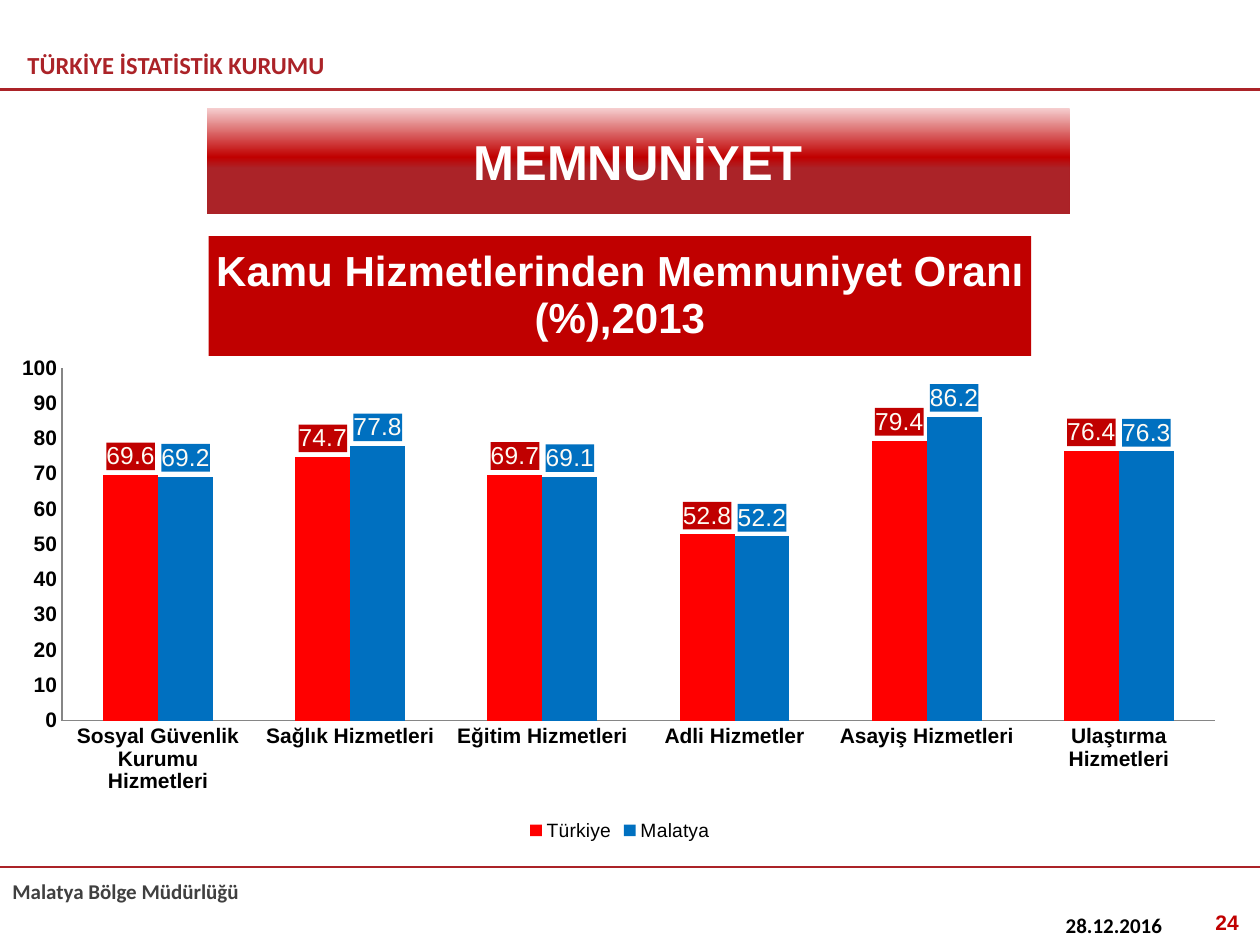
from lxml.etree import SubElement
from pptx import Presentation
from pptx.chart.data import CategoryChartData
from pptx.dml.color import RGBColor
from pptx.enum.chart import XL_CHART_TYPE, XL_LABEL_POSITION, XL_LEGEND_POSITION, XL_TICK_MARK
from pptx.enum.shapes import MSO_CONNECTOR
from pptx.enum.text import MSO_ANCHOR, PP_ALIGN
from pptx.oxml import parse_xml
from pptx.oxml.ns import nsdecls, qn
from pptx.util import Inches, Pt

BRAND = RGBColor(0xAB, 0x23, 0x28)
DARK_RED = RGBColor(0xC0, 0x00, 0x00)
RED = RGBColor(0xFF, 0x00, 0x00)
BLUE = RGBColor(0x00, 0x70, 0xC0)
PINK = RGBColor(0xF5, 0xCD, 0xCE)
CREAM = RGBColor(0xFE, 0xFB, 0xF4)
WHITE = RGBColor(0xFF, 0xFF, 0xFF)
BLACK = RGBColor(0x00, 0x00, 0x00)
CHARCOAL = RGBColor(0x40, 0x40, 0x40)
AXIS_GREY = RGBColor(0x86, 0x86, 0x86)

CATEGORIES = ["Sosyal Güvenlik Kurumu Hizmetleri", "Sağlık Hizmetleri", "Eğitim Hizmetleri",
              "Adli Hizmetler", "Asayiş Hizmetleri", "Ulaştırma Hizmetleri"]
SERIES = [
    ("Türkiye", (69.6, 74.7, 69.7, 52.8, 79.4, 76.4), RED, DARK_RED),
    ("Malatya", (69.2, 77.8, 69.1, 52.2, 86.2, 76.3), BLUE, BLUE),
]


class SlideBuilder:
    def __init__(self, slide):
        self.slide = slide

    def style(self, font, size, color, bold=True, name="Arial"):
        font.name = name
        font.size = Pt(size)
        font.bold = bold
        font.color.rgb = color

    def box(self, sp, left, top, width, height):
        sp.left, sp.top = Inches(left), Inches(top)
        sp.width, sp.height = Inches(width), Inches(height)

    def text(self, text, at, size, color, name="Calibri", align=PP_ALIGN.LEFT):
        sp = self.slide.shapes.add_textbox(*[Inches(v) for v in at])
        tf = sp.text_frame
        tf.word_wrap = True
        p = tf.paragraphs[0]
        p.text = text
        p.alignment = align
        self.style(p.runs[0].font, size, color, name=name)

    def rule(self, y):
        line = self.slide.shapes.add_connector(
            MSO_CONNECTOR.STRAIGHT, 0, Inches(y), Inches(10), Inches(y))
        line.line.color.rgb = BRAND
        line.line.width = Pt(1.5)
        SubElement(line._element.spPr, qn("a:effectLst"))

    def title(self, text, at, stops):
        sp = self.slide.shapes.title
        self.box(sp, *at)
        sp.fill.gradient()
        sp.fill.gradient_angle = 270
        gs_list = sp._element.spPr.find(".//" + qn("a:gsLst"))
        for gs in list(gs_list):
            gs_list.remove(gs)
        for percent, color in stops:
            gs = SubElement(gs_list, qn("a:gs"), pos=str(percent * 1000))
            SubElement(gs, qn("a:srgbClr"), val=str(color))
        tf = sp.text_frame
        tf.text = text
        tf.vertical_anchor = MSO_ANCHOR.MIDDLE
        p = tf.paragraphs[0]
        p.alignment = PP_ALIGN.CENTER
        self.style(p.runs[0].font, 28, WHITE)

    def axis(self, axis):
        axis.has_major_gridlines = False
        axis.major_tick_mark = axis.minor_tick_mark = XL_TICK_MARK.NONE
        axis.format.line.color.rgb = AXIS_GREY
        self.style(axis.tick_labels.font, 12, BLACK)

    def labels(self, series, color):
        labels = series.data_labels
        labels.show_value = True
        labels.number_format = "0.0"
        labels.number_format_is_linked = False
        labels.position = XL_LABEL_POSITION.OUTSIDE_END
        self.style(labels.font, 14, CREAM, bold=False)
        labels._element.find(qn("c:txPr")).addprevious(parse_xml(
            f'<c:spPr {nsdecls("c", "a")}><a:solidFill><a:srgbClr val="{color}"/>'
            '</a:solidFill></c:spPr>'))

    def plot_layout(self, chart, **fractions):
        area = chart._chartSpace.chart.plotArea
        for old in area.findall(qn("c:layout")):
            area.remove(old)
        values = "".join(f'<c:{k} val="{v}"/>' for k, v in fractions.items())
        area.insert(0, parse_xml(
            f'<c:layout {nsdecls("c")}><c:manualLayout><c:layoutTarget val="inner"/>'
            f'<c:xMode val="edge"/><c:yMode val="edge"/>{values}</c:manualLayout></c:layout>'))

    def column_chart(self, title, at):
        data = CategoryChartData()
        data.categories = CATEGORIES
        for name, values, _, _ in SERIES:
            data.add_series(name, values)
        chart = self.slide.shapes.add_chart(
            XL_CHART_TYPE.COLUMN_CLUSTERED, *[Inches(v) for v in at], data).chart
        self.style(chart.font, 10, BLACK, bold=False)

        chart.has_title = True
        chart.chart_title.include_in_layout = False
        tf = chart.chart_title.text_frame
        tf.text = title
        self.style(tf.paragraphs[0].runs[0].font, 24, WHITE)
        fill = chart.chart_title.format.fill
        fill.solid()
        fill.fore_color.rgb = DARK_RED

        chart.has_legend = True
        chart.legend.position = XL_LEGEND_POSITION.BOTTOM
        chart.legend.include_in_layout = False
        self.style(chart.legend.font, 11, BLACK, bold=False)

        self.axis(chart.category_axis)
        self.axis(chart.value_axis)
        chart.value_axis.minimum_scale = 0
        chart.value_axis.maximum_scale = 100
        chart.value_axis.major_unit = 10

        plot = chart.plots[0]
        plot.gap_width = 150
        plot.overlap = 0
        plot.vary_by_categories = False
        for series, (_, _, color, label_color) in zip(plot.series, SERIES):
            series.format.fill.solid()
            series.format.fill.fore_color.rgb = color
            self.labels(series, label_color)
        self.plot_layout(chart, x=0.05, y=0.24, w=0.93, h=0.56)


def main():
    prs = Presentation()
    prs.slide_width, prs.slide_height = Inches(10), Inches(7.5)
    s = SlideBuilder(prs.slides.add_slide(prs.slide_layouts[5]))
    s.text("TÜRKİYE İSTATİSTİK KURUMU", (0.12, 0.35, 3.54, 0.35), 14, BRAND)
    s.text("Malatya Bölge Müdürlüğü", (0, 6.92, 4.29, 0.35), 12, CHARCOAL)
    for y in (0.71, 6.88):
        s.rule(y)
    s.text("28.12.2016", (8.36, 7.19, 1.2, 0.3), 12, BLACK)
    s.text("24", (7.6, 7.17, 2.33, 0.3), 12, DARK_RED, name="Arial", align=PP_ALIGN.RIGHT)
    s.title("MEMNUNİYET", (1.64, 0.86, 6.85, 0.84), [(0, PINK), (46, DARK_RED), (57, BRAND)])
    s.column_chart("Kamu Hizmetlerinden Memnuniyet Oranı (%),2013", (0, 1.72, 9.84, 5))
    prs.save("out.pptx")


if __name__ == "__main__":
    main()
